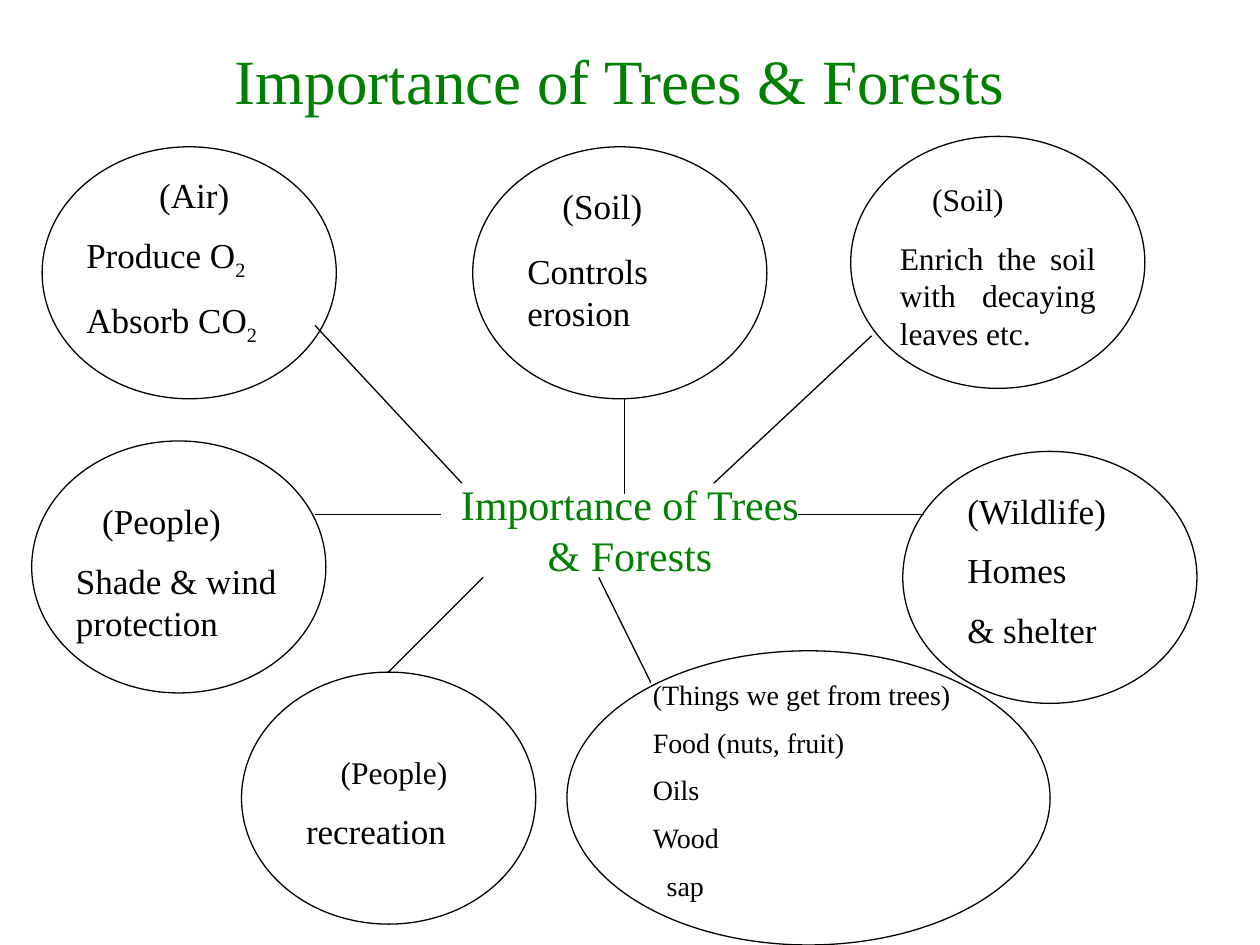
from pptx import Presentation
from pptx.dml.color import RGBColor
from pptx.enum.shapes import MSO_CONNECTOR, MSO_SHAPE
from pptx.enum.text import MSO_ANCHOR, PP_ALIGN
from pptx.oxml.ns import qn
from pptx.util import Cm, Pt
from lxml.etree import SubElement

COLORS = {"green": "008000", "black": "000000"}
FACE = "Times New Roman"
LEFT, EVEN, MID = PP_ALIGN.LEFT, PP_ALIGN.JUSTIFY, PP_ALIGN.CENTER
ROUND = (5.93, 5.08)

# Oval spot and size, text offset in the oval and width, alignment,
# head and body size, indent of first and last line, gap under head, lines
BUBBLES = [
    ((0.85, 2.96), ROUND, (0.64, 0.42), 5.08, EVEN, 20, 20, 1.47, 0, 10,
     ["(Air)", "Produce O_2", "Absorb CO_2"]),
    ((9.53, 2.96), ROUND, (0.85, 0.64), 4.45, EVEN, 20, 20, 0.71, 0, 13,
     ["(Soil)", "Controls erosion"]),
    ((17.15, 2.75), ROUND, (0.74, 0.75), 4.45, EVEN, 18, 18, 0.65, 0, 12,
     ["(Soil)", "Enrich the soil with decaying leaves etc."]),
    ((18.2, 9.1), ROUND, (1.05, 0.64), 4.02, EVEN, 20, 20, 0, 0, 10,
     ["(Wildlife)", "Homes", "& shelter"]),
    ((11.43, 13.12), (9.74, 5.93), (1.48, 0.42), 7.41, LEFT, 16, 16, 0, 0.28, 8,
     ["(Things we get from trees)", "Food (nuts, fruit)", "Oils", "Wood", "sap"]),
    ((4.87, 13.55), ROUND, (1.05, 1.5), 3.81, LEFT, 18, 20, 0.7, 0, 11,
     ["(People)", "recreation"]),
    ((0.64, 8.89), ROUND, (0.64, 1.06), 4.66, LEFT, 20, 20, 0.53, 0, 10,
     ["(People)", "Shade & wind protection"]),
]
SPOKES = [
    (6.35, 10.37, 8.89, 10.37), (7.83, 13.55, 9.74, 11.64),
    (12.07, 11.64, 13.12, 13.76), (16.09, 10.37, 18.63, 10.37),
    (14.39, 9.74, 17.57, 6.77), (12.59, 9.95, 12.59, 8.04),
    (6.35, 6.56, 9.31, 9.74),
]


def style(font, size, color):
    font.name, font.size = FACE, Pt(size)
    font.color.rgb = RGBColor.from_string(COLORS[color])


def add_box(slide, x, y, w, h):
    frame = slide.shapes.add_textbox(Cm(x), Cm(y), Cm(w), Cm(h)).text_frame
    frame.word_wrap = True
    return frame


def fill_line(para, text, size):
    """Write a line; what follows an underscore is set as subscript."""
    base, _, sub = text.partition("_")
    para.text = base
    if sub:
        run = para.add_run()
        run.text = sub
        run._r.get_or_add_rPr().set("baseline", "-25000")
    for run in para.runs:
        style(run.font, size, "black")


def add_bubble(slide, spot, size, shift, width, align, head, body,
               first, last, gap, lines):
    (x, y), (w, h) = spot, size
    oval = slide.shapes.add_shape(MSO_SHAPE.OVAL, Cm(x), Cm(y), Cm(w), Cm(h))
    oval.shadow.inherit = False
    oval.fill.background()
    oval.line.color.rgb = RGBColor.from_string(COLORS["black"])
    oval.line.width = Pt(0.75)
    frame = add_box(slide, x + shift[0], y + shift[1], width, h - 2 * shift[1])
    for i, text in enumerate(lines):
        para = frame.add_paragraph() if i else frame.paragraphs[0]
        para.alignment = align
        fill_line(para, text, body if i else head)
        if i:
            para.space_before = Pt(gap if i == 1 else body / 2)
        indent = first if i == 0 else last if text == lines[-1] else 0
        if indent:
            para._p.get_or_add_pPr().set("indent", str(Cm(indent)))


def add_spoke(slide, ends):
    line = slide.shapes.add_connector(MSO_CONNECTOR.STRAIGHT, *map(Cm, ends))
    line.line.color.rgb = RGBColor.from_string(COLORS["black"])
    line.line.width = Pt(0.75)
    SubElement(line._element.spPr, qn("a:effectLst"))


def add_title(slide, x, y, w, h):
    title = slide.shapes.title
    title.left, title.top, title.width, title.height = map(Cm, (x, y, w, h))
    frame = title.text_frame
    frame.text = "Importance of Trees & Forests"
    frame.vertical_anchor = MSO_ANCHOR.MIDDLE
    para = frame.paragraphs[0]
    para.alignment = MID
    style(para.runs[0].font, 36, "green")


def add_hub(slide, x, y, w, h):
    frame = add_box(slide, x, y, w, h)
    frame.text = "Importance of Trees & Forests"
    para = frame.paragraphs[0]
    para.alignment = MID
    style(para.runs[0].font, 24, "green")


def main():
    deck = Presentation()
    deck.slide_width, deck.slide_height = Cm(25.4), Cm(19.05)
    slide = deck.slides.add_slide(deck.slide_layouts[5])
    add_title(slide, 1.7, 0, 21.59, 3.18)
    for bubble in BUBBLES:
        add_bubble(slide, *bubble)
    add_hub(slide, 8.89, 9.53, 7.62, 2.31)
    for ends in SPOKES:
        add_spoke(slide, ends)
    deck.save("out.pptx")


if __name__ == "__main__":
    main()
